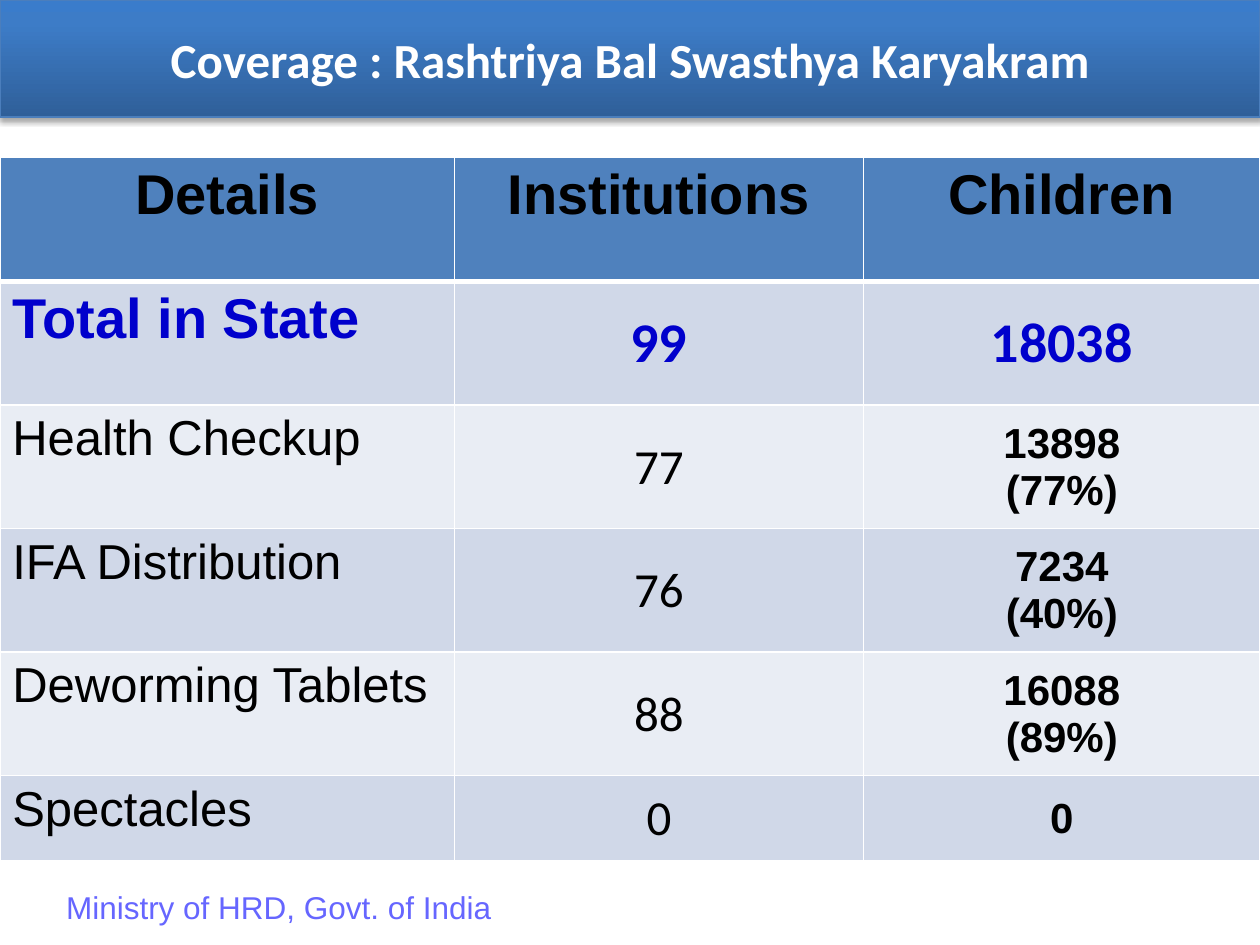
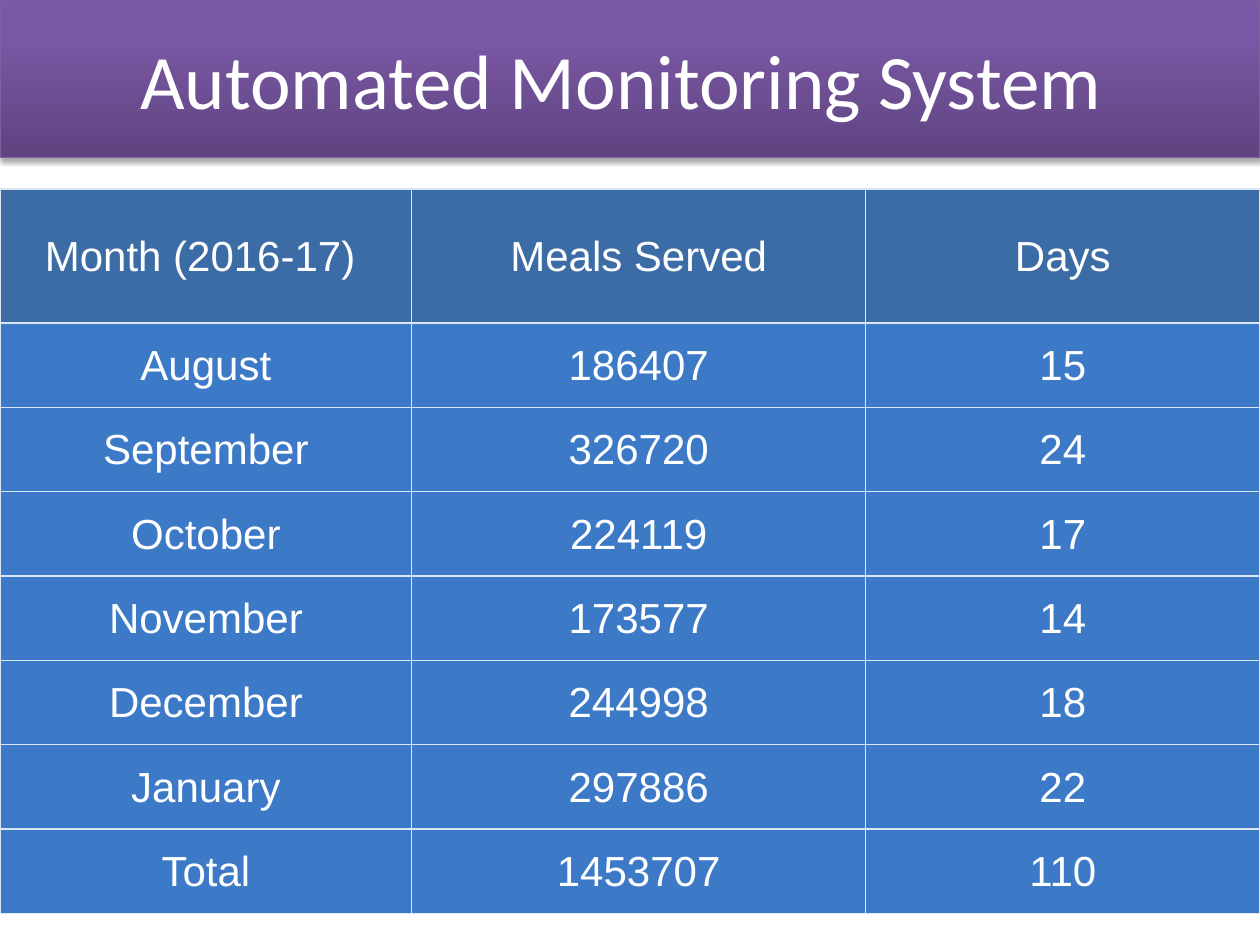
import copy

import pptx
import pptx.dml.color
import pptx.enum.text
import pptx.oxml
import pptx.oxml.ns
import pptx.util

Cm = pptx.util.Cm
Pt = pptx.util.Pt
CENTER = pptx.enum.text.PP_ALIGN.CENTER
LEFT = pptx.enum.text.PP_ALIGN.LEFT
MIDDLE = pptx.enum.text.MSO_ANCHOR.MIDDLE
TOP = pptx.enum.text.MSO_ANCHOR.TOP
NAMESPACE = pptx.oxml.ns.nsdecls("a")

# Shared colours
WHITE, BLACK, STATE_BLUE, MINISTRY_BLUE = "FFFFFF", "000000", "0000CC", "6666FF"
BLUE_BAND = {"stops": ("2F5F99", "3D7CC7", "3A7CCB"), "edge": "4B7EBC"}
PURPLE_BAND = {"stops": ("5F4480", "7B58A6", "7C57A8"), "edge": "7D60A0"}
BAND_POSITIONS = (0, 0.8, 1)

# Cell layouts: text inset from the corner, or centred with thin margins
LABEL_CELL = dict(vertical_anchor=TOP, margin_left=Cm(0.25), margin_right=Cm(0.25),
                  margin_top=Cm(0.13), margin_bottom=Cm(0.13))
VALUE_CELL = dict(vertical_anchor=MIDDLE, margin_left=Cm(0.03), margin_right=Cm(0.03),
                  margin_top=Cm(0.03), margin_bottom=0)


def rgb(code):
    return pptx.dml.color.RGBColor.from_string(code)


def set_values(target, values):
    for attribute, value in values.items():
        setattr(target, attribute, value)


def text_style(size, name="Arial", color=BLACK, bold=False, align=CENTER):
    return {"font": dict(size=Pt(size), name=name, bold=bold),
            "color": color, "align": align}


class Deck:
    WIDTH, HEIGHT = 25.4, 19.05

    def __init__(self):
        self.presentation = pptx.Presentation()
        set_values(self.presentation,
                   dict(slide_width=Cm(self.WIDTH), slide_height=Cm(self.HEIGHT)))
        self.slide = None

    def fill_text(self, frame, text, style):
        frame.text = text
        for paragraph in frame.paragraphs:
            paragraph.alignment = style["align"]
            set_values(paragraph.font, style["font"])
            paragraph.font.color.rgb = rgb(style["color"])

    def titled_slide(self, text, height, band, size, bold):
        self.slide = self.presentation.slides.add_slide(self.presentation.slide_layouts[5])
        title = self.slide.shapes.title
        set_values(title, dict(left=0, top=0, width=Cm(self.WIDTH), height=Cm(height)))
        self.fill_text(title.text_frame, text, text_style(size, "Calibri", WHITE, bold))
        set_values(title.text_frame, dict(vertical_anchor=MIDDLE, word_wrap=True,
                                          auto_size=pptx.enum.text.MSO_AUTO_SIZE.NONE))
        # Band gradient, darkest at the bottom
        title.fill.gradient()
        title.fill.gradient_angle = 90
        properties = title.element.spPr
        stop_list = properties.find(".//" + pptx.oxml.ns.qn("a:gsLst"))
        stop_list.append(copy.deepcopy(stop_list[-1]))
        for stop, color, position in zip(title.fill.gradient_stops, band["stops"], BAND_POSITIONS):
            stop.color.rgb = rgb(color)
            stop.position = position
        title.line.color.rgb = rgb(band["edge"])
        title.line.width = Pt(0.75)
        # Soft shadow below the band
        properties.append(pptx.oxml.parse_xml(
            f'<a:effectLst {NAMESPACE}><a:outerShdw blurRad="{Pt(3.1)}" dist="{Pt(1.8)}" '
            f'dir="5400000" rotWithShape="0"><a:srgbClr val="{BLACK}">'
            '<a:alpha val="35000"/></a:srgbClr></a:outerShdw></a:effectLst>'))

    def borders(self, cell, color, top=1, bottom=1):
        properties = cell._tc.get_or_add_tcPr()
        for index, (side, width) in enumerate(dict(L=1, R=1, T=top, B=bottom).items()):
            properties.insert(index, pptx.oxml.parse_xml(
                f'<a:ln{side} {NAMESPACE} w="{Pt(width)}"><a:solidFill>'
                f'<a:srgbClr val="{color}"/></a:solidFill></a:ln{side}>'))

    def table(self, top, columns, heights, rows, design, border, header_rule=1):
        """design(row, column) gives the cell's layout, text style and fill."""
        grid = self.slide.shapes.add_table(len(rows), len(columns), 0, Cm(top),
                                           Cm(sum(columns)), Cm(sum(heights))).table
        grid.horz_banding = False
        for column, width in zip(grid.columns, columns):
            column.width = Cm(width)
        for r, (values, height) in enumerate(zip(rows, heights)):
            grid.rows[r].height = Cm(height)
            for c, value in enumerate(values):
                cell = grid.cell(r, c)
                layout, style, fill = design(r, c)
                set_values(cell, layout)
                self.fill_text(cell.text_frame, value, style)
                cell.fill.solid()
                cell.fill.fore_color.rgb = rgb(fill)
                self.borders(cell, border, top=header_rule if r == 1 else 1,
                             bottom=header_rule if r == 0 else 1)

    def text(self, left, top, width, height, text, style):
        frame = self.slide.shapes.add_textbox(Cm(left), Cm(top), Cm(width), Cm(height)).text_frame
        frame.word_wrap = True
        self.fill_text(frame, text, style)


def coverage_design(row, column):
    fill = "4F81BD" if row == 0 else "D0D8E8" if row % 2 else "E9EDF4"
    if row == 0:
        return LABEL_CELL, text_style(32, bold=True), fill
    layout = VALUE_CELL if column else LABEL_CELL
    if row == 1:
        style = text_style(32, "Calibri" if column else "Arial", STATE_BLUE, True,
                           CENTER if column else LEFT)
    else:
        style = (text_style(28, align=LEFT), text_style(28, "Calibri"),
                 text_style(24, bold=True))[column]
    # The last row follows the same banding as the rest
    return layout, style, fill


def meals_design(row, column):
    return VALUE_CELL, text_style(24, color=WHITE), "3C7AC8" if row else "3C6CA6"


def main():
    deck = Deck()

    # Health programme coverage
    deck.titled_slide("Coverage : Rashtriya Bal Swasthya Karyakram", 2.36, BLUE_BAND, 28, True)
    coverage = [
        ("Details", "Institutions", "Children"),
        ("Total in State", "99", "18038"),
        ("Health Checkup", "77", "13898\n(77%)"),
        ("IFA Distribution", "76", "7234\n(40%)"),
        ("Deworming Tablets", "88", "16088\n(89%)"),
        ("Spectacles", "0", "0"),
    ]
    deck.table(3.18, (9.16, 8.25, 7.99), [2.49] * 5 + [1.72], coverage,
               coverage_design, WHITE, header_rule=3)
    deck.text(0.64, 17.78, 9.96, 1.02, "Ministry of HRD, Govt. of India",
              text_style(18, color=MINISTRY_BLUE))

    # Meals served by month
    deck.titled_slide("Automated Monitoring System ", 3.18, PURPLE_BAND, 44, False)
    meals = [
        ("Month (2016-17) ", "Meals Served", "Days"),
        ("August", "186407", "15"),
        ("September", "326720", "24"),
        ("October", "224119", "17"),
        ("November", "173577", "14"),
        ("December", "244998", "18"),
        ("January", "297886", "22"),
        ("Total", "1453707", "110"),
    ]
    deck.table(3.81, (8.3, 9.15, 7.95), [2.7] + [1.7] * 7, meals, meals_design, "DCE6F2")

    deck.presentation.save("out.pptx")


if __name__ == "__main__":
    main()
